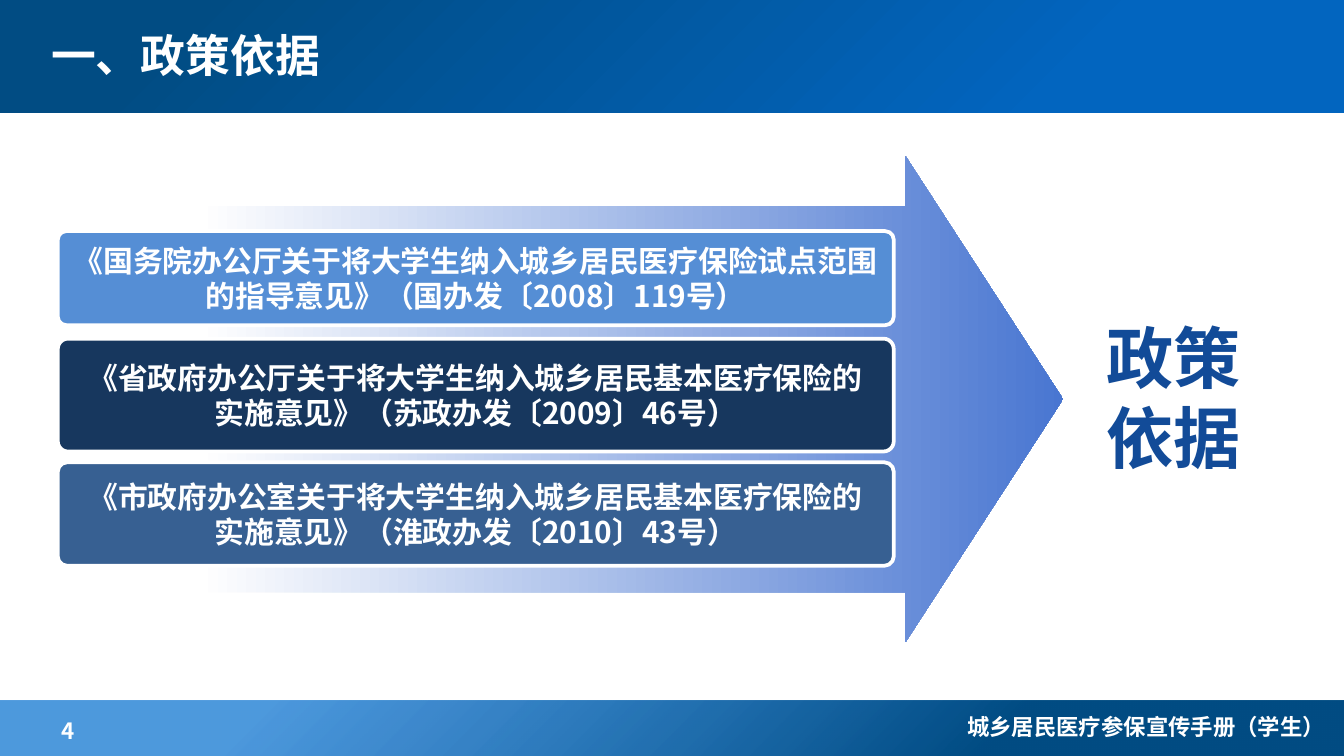
from lxml import etree
from pptx import Presentation
from pptx.dml.color import RGBColor
from pptx.enum.lang import MSO_LANGUAGE_ID as Language
from pptx.enum.shapes import MSO_SHAPE as Shape
from pptx.enum.text import MSO_ANCHOR as Anchor, PP_ALIGN as Align
from pptx.oxml import parse_xml
from pptx.oxml.ns import nsdecls, qn
from pptx.util import Inches, Pt

WHITE = RGBColor(0xFF, 0xFF, 0xFF)
DEEP_BLUE = RGBColor(0x01, 0x4C, 0x83)
HEADER_BLUE = RGBColor(0x02, 0x65, 0xBF)
FOOTER_BLUE = RGBColor(0x02, 0x6D, 0xCE)
ARROW_BLUE = RGBColor(0x49, 0x76, 0xD1)
CONCLUSION_BLUE = RGBColor(0x12, 0x4B, 0x98)
LIGHT_BLUE = RGBColor(0x55, 0x8E, 0xD5)
NAVY = RGBColor(0x17, 0x37, 0x5E)
STEEL_BLUE = RGBColor(0x37, 0x60, 0x92)

CJK_FONT = "Noto Sans CJK SC"
CORNER = 0.091
CORNER_DIRECTION = (
    '<a:path path="circle"><a:fillToRect l="100000" t="100000"/></a:path>'
)
LEFT_TO_RIGHT = '<a:lin ang="0" scaled="0"/>'

# top, height, side margin, colour, text
POLICIES = [
    (1.72, 0.70, 0.08, LIGHT_BLUE,
     "《国务院办公厅关于将大学生纳入城乡居民医疗保险试点范围的指导意见》（国办发〔2008〕119号）"),
    (2.52, 0.84, 0.15, NAVY,
     "《省政府办公厅关于将大学生纳入城乡居民基本医疗保险的实施意见》（苏政办发〔2009〕46号）"),
    (3.44, 0.77, 0.15, STEEL_BLUE,
     "《市政府办公室关于将大学生纳入城乡居民基本医疗保险的实施意见》（淮政办发〔2010〕43号）"),
]


def place(shape, left, top, width, height):
    shape.left, shape.top = Inches(left), Inches(top)
    shape.width, shape.height = Inches(width), Inches(height)


def write_text(shape, text, size, color=WHITE, font=CJK_FONT, align=Align.LEFT,
               anchor=Anchor.MIDDLE, margin=0.1):
    """Fill a shape with bold text, one paragraph for each line of text."""
    frame = shape.text_frame
    frame.word_wrap = True
    frame.vertical_anchor = anchor
    frame.margin_left = frame.margin_right = Inches(margin)
    frame.margin_top = frame.margin_bottom = Inches(0.05)
    frame.text = text
    for paragraph in frame.paragraphs:
        paragraph.alignment = align
        for run in paragraph.runs:
            run.font.size = Pt(size)
            run.font.bold = True
            run.font.language_id = Language.SIMPLIFIED_CHINESE
            run.font.color.rgb = color
            run.font.name = font
            east_asian = etree.SubElement(run.font._element, qn("a:ea"))
            east_asian.set("typeface", CJK_FONT)


def add_shape(slide, kind, box, fill=None, line=None):
    shape = slide.shapes.add_shape(kind, *map(Inches, box))
    shape.shadow.inherit = False
    if fill is None:
        shape.fill.background()
    else:
        shape.fill.solid()
        shape.fill.fore_color.rgb = fill
    if line is None:
        shape.line.fill.background()
    else:
        shape.line.color.rgb = line
        shape.line.width = Pt(2)
    return shape


def add_gradient_shape(slide, kind, box, stops, direction):
    """Add a shape whose stops are (position %, colour, opacity %)."""
    shape = add_shape(slide, kind, box)
    stop_xml = "".join(
        f'<a:gs pos="{position * 1000}"><a:srgbClr val="{color}">'
        f'<a:alpha val="{opacity * 1000}"/></a:srgbClr></a:gs>'
        for position, color, opacity in stops
    )
    gradient = parse_xml(
        f'<a:gradFill {nsdecls("a")} rotWithShape="1">'
        f"<a:gsLst>{stop_xml}</a:gsLst>{direction}</a:gradFill>"
    )
    properties = shape.element.spPr
    properties.replace(properties.find(qn("a:noFill")), gradient)
    return shape


def add_label(slide, box, text, **text_format):
    label = slide.shapes.add_textbox(*map(Inches, box))
    write_text(label, text, **text_format)


def add_rounded_box(slide, box, text, fill=None, line=None, **text_format):
    shape = add_shape(slide, Shape.ROUNDED_RECTANGLE, box, fill, line)
    shape.adjustments[0] = CORNER
    write_text(shape, text, align=Align.CENTER, **text_format)


def add_frame(slide):
    """Add the header and footer bars with the footer's labels."""
    add_gradient_shape(slide, Shape.RECTANGLE, (0, 5.21, 10, 0.42),
                       [(26, DEEP_BLUE, 100), (80, FOOTER_BLUE, 70)],
                       CORNER_DIRECTION)
    add_gradient_shape(slide, Shape.RECTANGLE, (0, -0.03, 10.03, 0.87),
                       [(21, HEADER_BLUE, 100), (86, DEEP_BLUE, 100)],
                       CORNER_DIRECTION)
    add_label(slide, (0.32, 5.29, 1.57, 0.26), "4", size=12,
              anchor=Anchor.TOP, margin=0.14)
    add_label(slide, (6.89, 5.26, 3.07, 0.26), "城乡居民医疗参保宣传手册（学生）",
              size=12, align=Align.RIGHT, anchor=Anchor.TOP)


def add_title(slide, text):
    title = slide.shapes.title
    slide.shapes.element.append(title.element)  # in front of the header bar
    place(title, 0.28, 0.05, 6.38, 0.71)
    write_text(title, text, size=24, font="Times New Roman")


def add_policy_arrow(slide):
    arrow = add_gradient_shape(slide, Shape.RIGHT_ARROW, (1.48, 1.16, 6.43, 3.62),
                               [(0, WHITE, 100), (100, ARROW_BLUE, 100)],
                               LEFT_TO_RIGHT)
    arrow.adjustments[0] = 0.793
    arrow.adjustments[1] = 0.324


def main():
    presentation = Presentation()
    presentation.slide_width = Inches(10)
    presentation.slide_height = Inches(10) * 9 // 16
    slide = presentation.slides.add_slide(presentation.slide_layouts[5])

    add_frame(slide)
    add_title(slide, "一、政策依据")
    add_policy_arrow(slide)
    for top, height, margin, color, text in POLICIES:
        add_rounded_box(slide, (0.43, top, 6.22, height), text, fill=color,
                        line=WHITE, size=16, margin=margin)
    add_rounded_box(slide, (7.36, 2.24, 2.75, 1.42), "政策\n依据", size=36,
                    color=CONCLUSION_BLUE, font="Arial")

    presentation.save("out.pptx")


if __name__ == "__main__":
    main()
